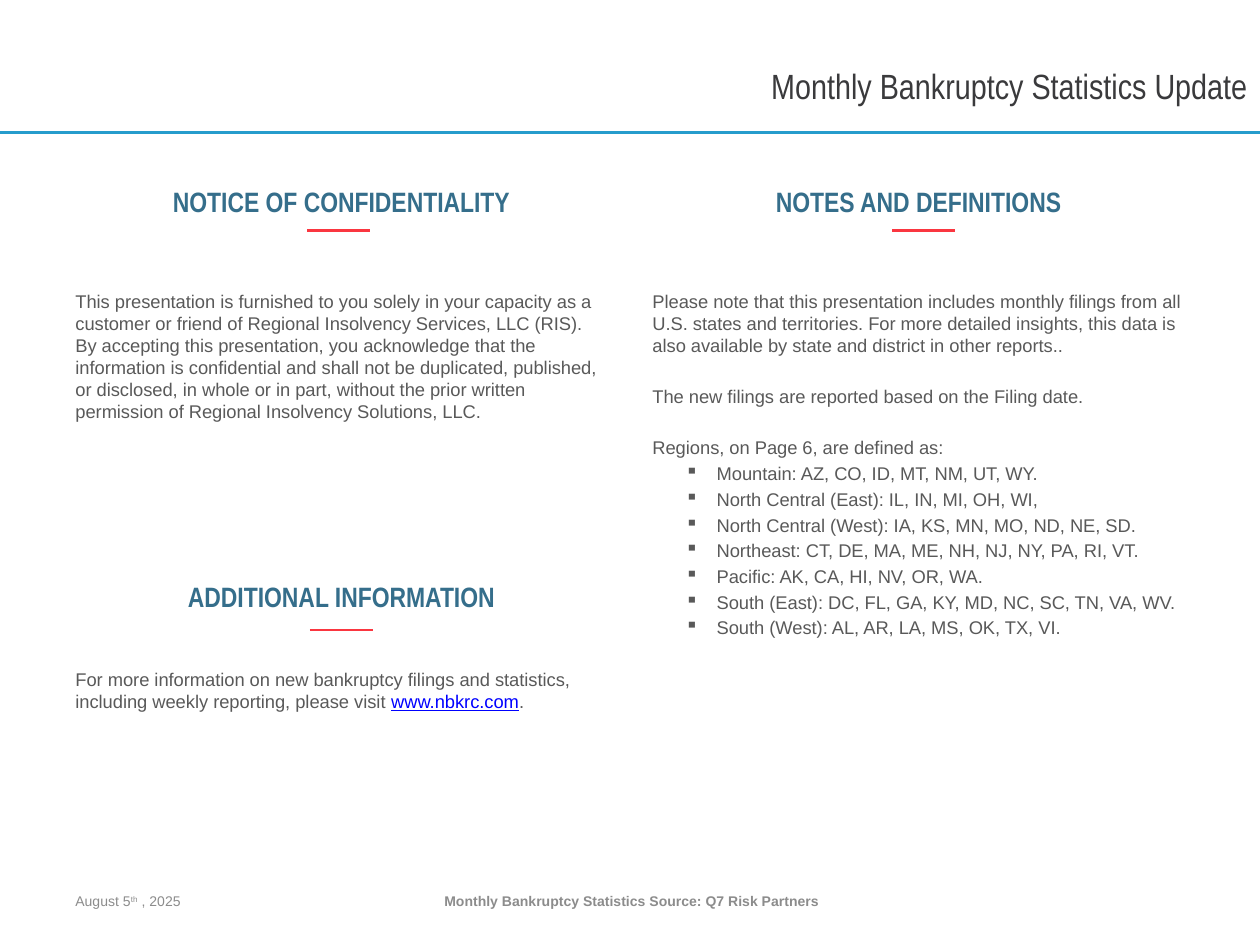
from lxml import etree
from pptx import Presentation
from pptx.dml.color import RGBColor
from pptx.enum.shapes import MSO_CONNECTOR
from pptx.enum.text import MSO_ANCHOR, PP_ALIGN
from pptx.oxml.ns import qn
from pptx.util import Inches, Pt

LEFT, CENTER, RIGHT = PP_ALIGN.LEFT, PP_ALIGN.CENTER, PP_ALIGN.RIGHT
TOP, MIDDLE = MSO_ANCHOR.TOP, MSO_ANCHOR.MIDDLE
STRAIGHT = MSO_CONNECTOR.STRAIGHT

COLORS = {
    "title": "3A3A3C", "heading": "356E8B", "body": "595959", "footer": "8C8C8C",
    "link": "0000FF", "rule": "269CCC", "accent": "FA3640",
}

# Content
TITLE = "Monthly Bankruptcy Statistics Update"
CONFIDENTIALITY = (
    "This presentation is furnished to you solely in your capacity as a customer or friend "
    "of Regional Insolvency Services, LLC (RIS). By accepting this presentation, you "
    "acknowledge that the information is confidential and shall not be duplicated, published, "
    "or disclosed, in whole or in part, without the prior written permission of Regional "
    "Insolvency Solutions, LLC."
)
NOTES = [
    "Please note that this presentation includes monthly filings from all U.S. states and "
    "territories. For more detailed insights, this data is also available by state and "
    "district in other reports..",
    "The new filings are reported based on the Filing date.",
    "Regions, on Page 6, are defined as:",
]
REGIONS = {
    "Mountain": "AZ, CO, ID, MT, NM, UT, WY.",
    "North Central (East)": "IL, IN, MI, OH, WI,",
    "North Central (West)": "IA, KS, MN, MO, ND, NE, SD.",
    "Northeast": "CT, DE, MA, ME, NH, NJ, NY, PA, RI, VT.",
    "Pacific": "AK, CA, HI, NV, OR, WA.",
    "South (East)": "DC, FL, GA, KY, MD, NC, SC, TN, VA, WV.",
    "South (West)": "AL, AR, LA, MS, OK, TX, VI.",
}
MORE_INFO = ("For more information on new bankruptcy filings and statistics, "
             "including weekly reporting, please visit ")
WEBSITE = "www.nbkrc.com"
SOURCE = "Monthly Bankruptcy Statistics Source: Q7 Risk Partners"
DATE_PARTS = ("August 5", "th", " , 2025")

# Layout, in inches
COLUMN_LEFT, COLUMN_RIGHT, COLUMN_WIDTH = 0.5, 5.08, 4.42
HEADING_HEIGHT, ACCENT_WIDTH = 0.7, 0.5
# heading, column left, heading top, accent left, accent y
SECTIONS = [
    ("NOTICE OF CONFIDENTIALITY", COLUMN_LEFT, 1.25, 2.44, 1.83),
    ("NOTES AND DEFINITIONS", COLUMN_RIGHT, 1.25, 7.08, 1.83),
    ("ADDITIONAL INFORMATION", COLUMN_LEFT, 4.38, 2.46, 5),
]
BULLET_GAP, NOTE_GAP = Pt(2.1), Pt(16.8)

prs = Presentation()
prs.slide_width, prs.slide_height = Inches(10), Inches(7.5)
slide = prs.slides.add_slide(prs.slide_layouts[6])


def rgb(name):
    return RGBColor.from_string(COLORS[name])


def add_line(left, y, width, color):
    line = slide.shapes.add_connector(
        STRAIGHT, Inches(left), Inches(y), Inches(left + width), Inches(y))
    line.line.color.rgb = rgb(color)
    line.line.width = Pt(1.5)
    etree.SubElement(line._element.spPr, qn("a:effectLst"))


def style(paragraph, size, color, font="Arial", bold=False, align=LEFT):
    paragraph.alignment = align
    paragraph.font.name = font
    paragraph.font.size = Pt(size)
    paragraph.font.bold = bold
    paragraph.font.color.rgb = rgb(color)


def add_text(box, runs, size, color, anchor=TOP, **look):
    frame = slide.shapes.add_textbox(*map(Inches, box)).text_frame
    frame.word_wrap = True
    frame.vertical_anchor = anchor
    paragraph = frame.paragraphs[0]
    for text in runs:
        paragraph.add_run().text = text
    style(paragraph, size, color, **look)
    return frame


def make_bullet(paragraph):
    properties = paragraph._p.get_or_add_pPr()
    properties.set("marL", str(Inches(0.51)))
    properties.set("indent", str(Inches(-0.25)))
    etree.SubElement(properties, qn("a:buChar"), char="▪")


# Title and rule
add_line(0, 1.05, 10, "rule")
add_text((0, 0.3, 10, 0.75), [TITLE], 20, "title", MIDDLE, font="Arial Narrow", align=RIGHT)

# Section headings
for heading, left, top, accent_left, accent_y in SECTIONS:
    add_text((left, top, COLUMN_WIDTH, HEADING_HEIGHT), [heading], 16, "heading", MIDDLE,
             font="Arial Narrow", bold=True, align=CENTER)
    add_line(accent_left, accent_y, ACCENT_WIDTH, "accent")

# Confidentiality
add_text((COLUMN_LEFT, 2.25, COLUMN_WIDTH, 2), [CONFIDENTIALITY], 10.5, "body")

# Notes and regions
notes = add_text((COLUMN_RIGHT, 2.25, COLUMN_WIDTH, 4.42), NOTES[:1], 10.5, "body")
for note in NOTES[1:]:
    paragraph = notes.add_paragraph()
    paragraph.text = note
    paragraph.space_before = NOTE_GAP
    style(paragraph, 10.5, "body")
for region, states in REGIONS.items():
    paragraph = notes.add_paragraph()
    paragraph.text = f"{region}: {states}"
    paragraph.level = 1
    paragraph.space_before = BULLET_GAP
    make_bullet(paragraph)
    style(paragraph, 10.5, "body")

# Additional information
info = add_text((COLUMN_LEFT, 5.25, COLUMN_WIDTH, 1.42), [MORE_INFO, WEBSITE, "."], 10.5, "body")
website = info.paragraphs[0].runs[1]
website.font.color.rgb = rgb("link")
website.font.underline = True

# Footer
add_text((3.14, 6.95, 3.75, 0.4), [SOURCE], 8, "footer", MIDDLE, bold=True, align=CENTER)
date = add_text((0.5, 6.95, 2.33, 0.4), DATE_PARTS, 8, "footer", MIDDLE)
date.paragraphs[0].runs[1].font._element.set("baseline", "30000")

prs.save("out.pptx")
